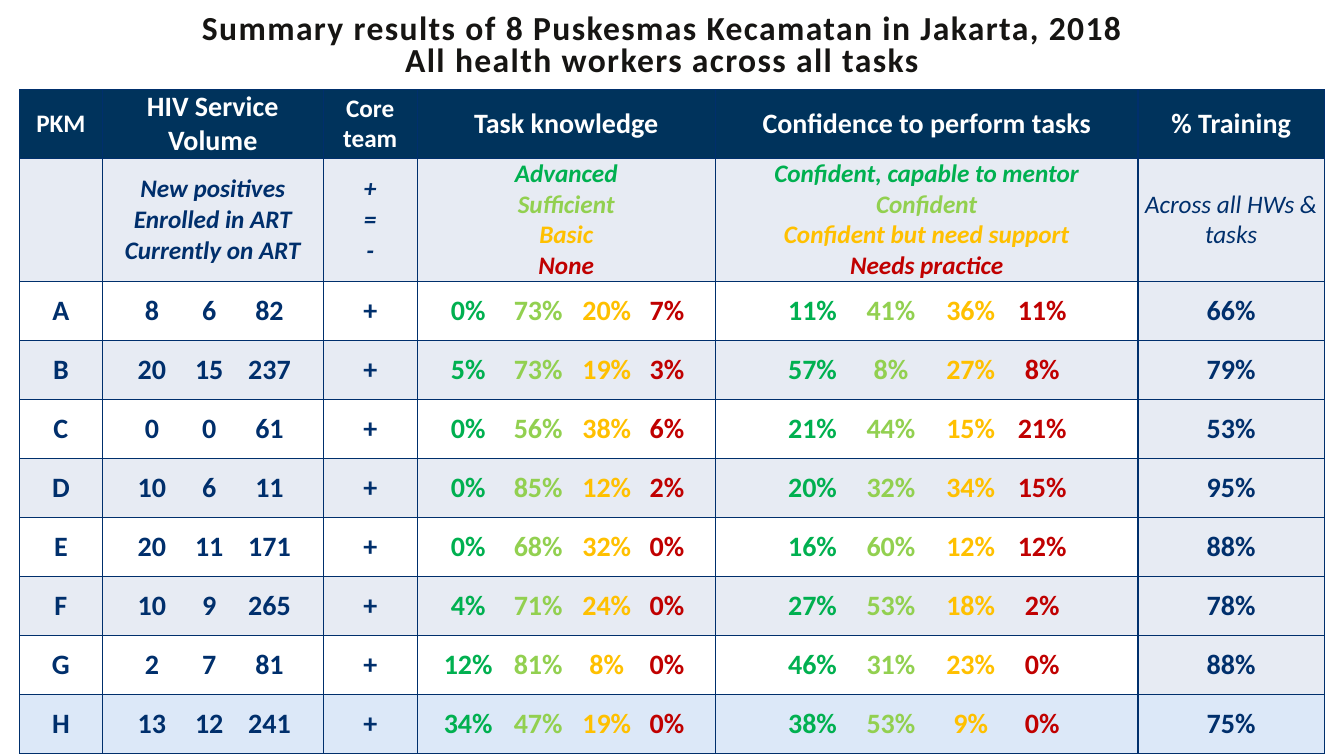
"""Build the slide of summary results for eight Puskesmas in Jakarta."""
from lxml.etree import SubElement
from pptx import Presentation
from pptx.dml.color import RGBColor
from pptx.enum.text import MSO_ANCHOR, PP_ALIGN
from pptx.oxml import parse_xml
from pptx.oxml.ns import nsdecls, qn
from pptx.util import Pt

NAVY = RGBColor(0x00, 0x2F, 0x6C)
HEAD = RGBColor(0x00, 0x33, 0x5C)
INK = RGBColor(0x16, 0x15, 0x13)
WHITE = RGBColor(0xFF, 0xFF, 0xFF)
PALE = RGBColor(0xE7, 0xEB, 0xF3)
BLUE = RGBColor(0xDC, 0xE8, 0xF8)
GREEN = RGBColor(0x00, 0xB0, 0x50)
LIME = RGBColor(0x92, 0xD0, 0x50)
AMBER = RGBColor(0xFF, 0xC0, 0x00)
RED = RGBColor(0xC0, 0x00, 0x00)
SCALE = (GREEN, LIME, AMBER, RED)
FONT = "Calibri"

TITLE = ("Summary results of 8 Puskesmas Kecamatan in Jakarta, 2018",
         "All health workers across all tasks")
HEADS = (("PKM", 18), ("HIV Service Volume", 20), ("Core team", 18),
         ("Task knowledge", 20), ("Confidence to perform tasks", 20),
         ("% Training", 20))
KEYS = (
    (),
    ("New positives", "Enrolled in ART", "Currently on ART"),
    ("+", "=", "-"),
    ("Advanced", "Sufficient", "Basic", "None"),
    ("Confident, capable to mentor", "Confident",
     "Confident but need support", "Needs practice"),
    ("Across all HWs & tasks",),
)
DATA = (
    ("A", "8 6 82", "+", "0% 73% 20% 7%", "11% 41% 36% 11%", "66%"),
    ("B", "20 15 237", "+", "5% 73% 19% 3%", "57% 8% 27% 8%", "79%"),
    ("C", "0 0 61", "+", "0% 56% 38% 6%", "21% 44% 15% 21%", "53%"),
    ("D", "10 6 11", "+", "0% 85% 12% 2%", "20% 32% 34% 15%", "95%"),
    ("E", "20 11 171", "+", "0% 68% 32% 0%", "16% 60% 12% 12%", "88%"),
    ("F", "10 9 265", "+", "4% 71% 24% 0%", "27% 53% 18% 2%", "78%"),
    ("G", "2 7 81", "+", "12% 81% 8% 0%", "46% 31% 23% 0%", "88%"),
    ("H", "13 12 241", "+", "34% 47% 19% 0%", "38% 53% 9% 0%", "75%"),
)
WIDTHS = (59, 158, 67, 213, 302, 133)
HEIGHTS = (49, 88) + (42.2,) * len(DATA)
STOPS = {1: (31, 72, 115), 3: (32, 82, 131, 174), 4: (65, 121, 178, 229)}
LAST = len(WIDTHS) - 1


def style(para, size, bold=True, slant=False):
    """Set the font of a paragraph."""
    font = para.font
    font.name, font.size = FONT, Pt(size)
    font.bold, font.italic = bold, slant


def write(para, text, color):
    """Add one coloured run."""
    run = para.add_run()
    run.text = text
    run.font.color.rgb = color
    return run


def dress(cell, fill):
    """Give a cell its fill, margins and border."""
    cell.fill.solid()
    cell.fill.fore_color.rgb = fill
    cell.vertical_anchor = MSO_ANCHOR.MIDDLE
    cell.margin_left = cell.margin_right = Pt(4.5)
    cell.margin_top = cell.margin_bottom = 0
    props = cell._tc.get_or_add_tcPr()
    for spot, side in enumerate(("lnL", "lnR", "lnT", "lnB")):
        props.insert(spot, parse_xml(
            f'<a:{side} {nsdecls("a")} w="{Pt(1)}"><a:solidFill>'
            f'<a:srgbClr val="{NAVY}"/></a:solidFill></a:{side}>'))


def lines(cell, texts, colors, size, bold=True, slant=False):
    """Write centred lines, one paragraph each."""
    frame = cell.text_frame
    for row, (text, color) in enumerate(zip(texts, colors)):
        para = frame.add_paragraph() if row else frame.paragraphs[0]
        para.alignment = PP_ALIGN.CENTER
        style(para, size, bold, slant)
        write(para, text, color)


def spread(cell, values, colors, stops):
    """Write values centred on tab stops."""
    para = cell.text_frame.paragraphs[0]
    para.alignment = PP_ALIGN.LEFT
    tabs = SubElement(para._p.get_or_add_pPr(), qn("a:tabLst"))
    for stop in stops:
        SubElement(tabs, qn("a:tab"), pos=str(Pt(stop)), algn="ctr")
    style(para, 20)
    for value, color in zip(values, colors):
        write(para, "\t" + value, color)


def hues(col):
    """Return the text colours of a body column."""
    return SCALE if col in (3, 4) else (NAVY,) * 3


def add_title(slide):
    """Add the two title lines."""
    box = slide.shapes.add_textbox(0, Pt(6.5), Pt(946), Pt(54))
    frame = box.text_frame
    frame.word_wrap = True
    frame.vertical_anchor = MSO_ANCHOR.MIDDLE
    lines(box, TITLE, (INK, INK), 24)
    for para in frame.paragraphs:
        para.line_spacing = 0.8
        para.runs[0]._r.get_or_add_rPr().set("spc", "100")


def add_grid(slide):
    """Add the results table."""
    table = slide.shapes.add_table(
        len(HEIGHTS), len(WIDTHS), Pt(14), Pt(64),
        Pt(sum(WIDTHS)), Pt(sum(HEIGHTS))).table
    for col, width in zip(table.columns, WIDTHS):
        col.width = Pt(width)
    for row, height in zip(table.rows, HEIGHTS):
        row.height = Pt(height)
    for col, ((head, size), keys) in enumerate(zip(HEADS, KEYS)):
        top, key = table.cell(0, col), table.cell(1, col)
        dress(top, HEAD)
        lines(top, (head,), (WHITE,), size)
        dress(key, PALE)
        lines(key, keys, hues(col), 18, col != LAST, True)
    for row, record in enumerate(DATA):
        for col, text in enumerate(record):
            cell = table.cell(row + 2, col)
            plain = PALE if row % 2 or col == LAST else WHITE
            dress(cell, BLUE if row == len(DATA) - 1 else plain)
            if col in STOPS:
                spread(cell, text.split(), hues(col), STOPS[col])
            else:
                lines(cell, (text,), (NAVY,), 20)


def main():
    """Build and save the slide."""
    deck = Presentation()
    deck.slide_width, deck.slide_height = Pt(960), Pt(540)
    slide = deck.slides.add_slide(deck.slide_layouts[6])
    add_grid(slide)
    add_title(slide)
    deck.save("out.pptx")


if __name__ == "__main__":
    main()
